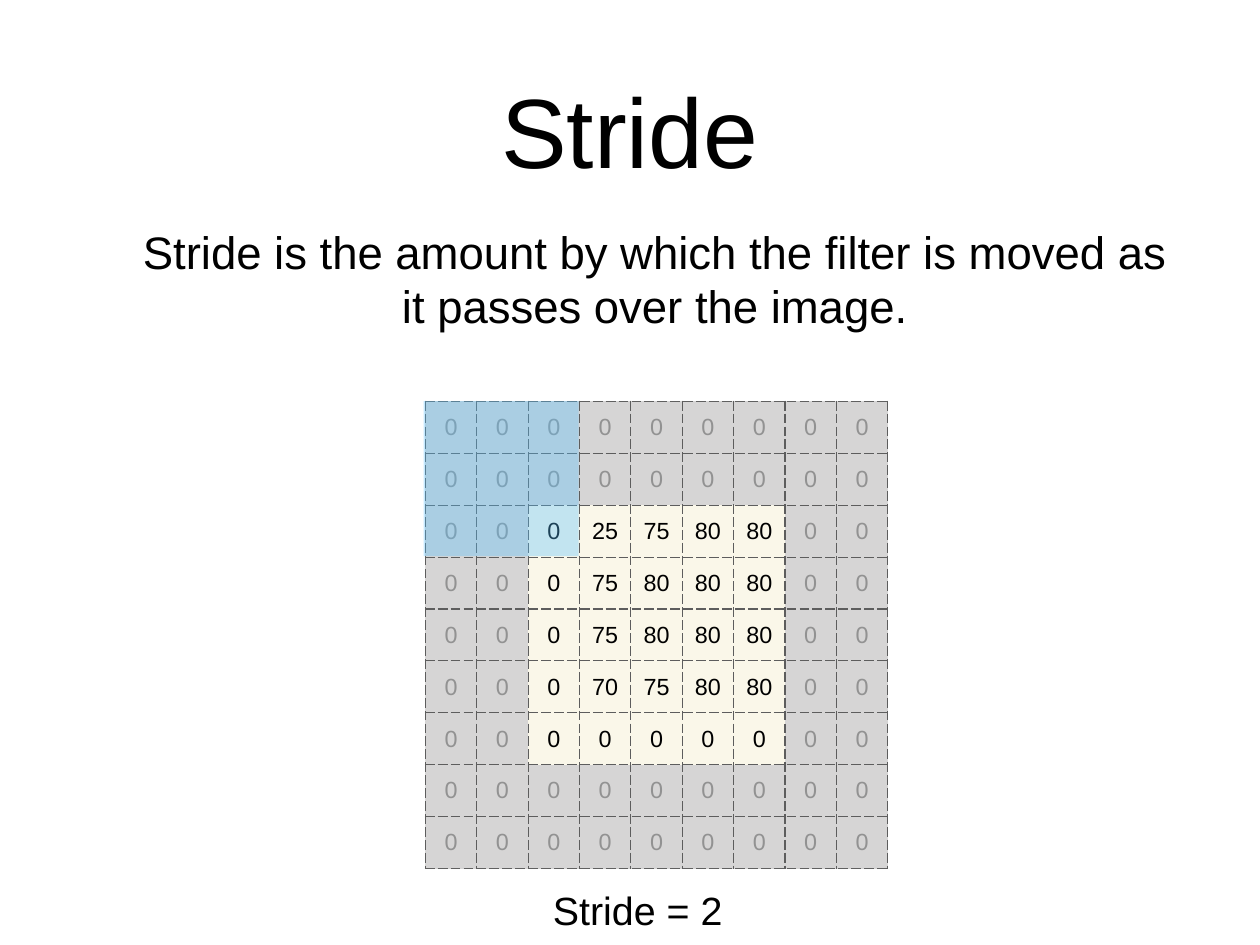
"""Build a slide explaining the stride of a convolution filter."""
from lxml.etree import SubElement
from pptx import Presentation
from pptx.dml.color import RGBColor
from pptx.enum.shapes import MSO_SHAPE
from pptx.enum.text import MSO_ANCHOR, PP_ALIGN
from pptx.oxml import parse_xml
from pptx.oxml.ns import nsdecls, qn
from pptx.util import Inches, Pt

BLACK = RGBColor(0x00, 0x00, 0x00)
PADDING_TEXT = RGBColor(0x92, 0x92, 0x92)
PADDING_FILL = RGBColor(0xD6, 0xD5, 0xD5)
IMAGE_FILL = RGBColor(0xFA, 0xF7, 0xE9)
FILTER_FILL = RGBColor(0x56, 0xC1, 0xFF)
GRID_LINE = RGBColor(0x5D, 0x5D, 0x5D)
EDGE_LINE = RGBColor(0x60, 0x60, 0x60)

INSET = Inches(0.06)
PADDING = 2
IMAGE = [
    [0, 25, 75, 80, 80],
    [0, 75, 80, 80, 80],
    [0, 75, 80, 80, 80],
    [0, 70, 75, 80, 80],
    [0, 0, 0, 0, 0],
]
GRID_SIZE = len(IMAGE) + 2 * PADDING


def style_paragraph(paragraph, size, color, alignment):
    paragraph.alignment = alignment
    paragraph.font.name = "Arial"
    paragraph.font.size = Pt(size)
    paragraph.font.color.rgb = color


def add_border(cell, position, side, color):
    border = parse_xml(
        f'<a:{side} {nsdecls("a")} w="12700"><a:solidFill><a:srgbClr val="{color}"/>'
        f'</a:solidFill><a:prstDash val="dash"/></a:{side}>'
    )
    cell._tc.get_or_add_tcPr().insert(position, border)


presentation = Presentation()
presentation.slide_width = Inches(14.22)
presentation.slide_height = Inches(10.67)
slide = presentation.slides.add_slide(presentation.slide_layouts[6])

texts = [
    ("Stride", 80, PP_ALIGN.CENTER, (1.04, 0.28, 12.14, 2.36)),
    ("Stride is the amount by which the filter is moved as it passes over the image.",
     37, PP_ALIGN.CENTER, (1.48, 2.48, 11.82, 1.32)),
    ("Stride = 2", 32, PP_ALIGN.LEFT, (6.18, 9.96, 2.42, 0.63)),
]
for text, size, alignment, box in texts:
    frame = slide.shapes.add_textbox(*map(Inches, box)).text_frame
    frame.word_wrap = True
    frame.vertical_anchor = MSO_ANCHOR.MIDDLE
    frame.margin_left = frame.margin_right = INSET
    frame.margin_top = frame.margin_bottom = INSET
    frame.text = text
    style_paragraph(frame.paragraphs[0], size, BLACK, alignment)

table = slide.shapes.add_table(
    GRID_SIZE, GRID_SIZE, Inches(4.8), Inches(4.53), Inches(5.22), Inches(5.28)
).table
table.first_row = False
table.horz_banding = False
for row in range(GRID_SIZE):
    for column in range(GRID_SIZE):
        image_row, image_column = row - PADDING, column - PADDING
        in_image = image_row in range(len(IMAGE)) and image_column in range(len(IMAGE))
        cell = table.cell(row, column)
        cell.text = str(IMAGE[image_row][image_column] if in_image else 0)
        cell.vertical_anchor = MSO_ANCHOR.MIDDLE
        cell.margin_left = cell.margin_right = INSET
        cell.margin_top = cell.margin_bottom = INSET
        cell.fill.solid()
        cell.fill.fore_color.rgb = IMAGE_FILL if in_image else PADDING_FILL
        style_paragraph(cell.text_frame.paragraphs[0], 19,
                        BLACK if in_image else PADDING_TEXT, PP_ALIGN.CENTER)
        top = EDGE_LINE if row == 0 else GRID_LINE
        bottom = EDGE_LINE if row == GRID_SIZE - 1 else GRID_LINE
        borders = [("lnL", GRID_LINE), ("lnR", GRID_LINE), ("lnT", top), ("lnB", bottom)]
        for position, (side, color) in enumerate(borders):
            add_border(cell, position, side, color)

filter_window = slide.shapes.add_shape(
    MSO_SHAPE.RECTANGLE, Inches(4.78), Inches(4.53), Inches(1.75), Inches(1.75)
)
filter_window.shadow.inherit = False
filter_window.line.fill.background()
filter_window.fill.solid()
filter_window.fill.fore_color.rgb = FILTER_FILL
filter_color = filter_window.fill._xPr.find(qn("a:solidFill")).find(qn("a:srgbClr"))
SubElement(filter_color, qn("a:alpha"), val="34000")

presentation.save("out.pptx")
